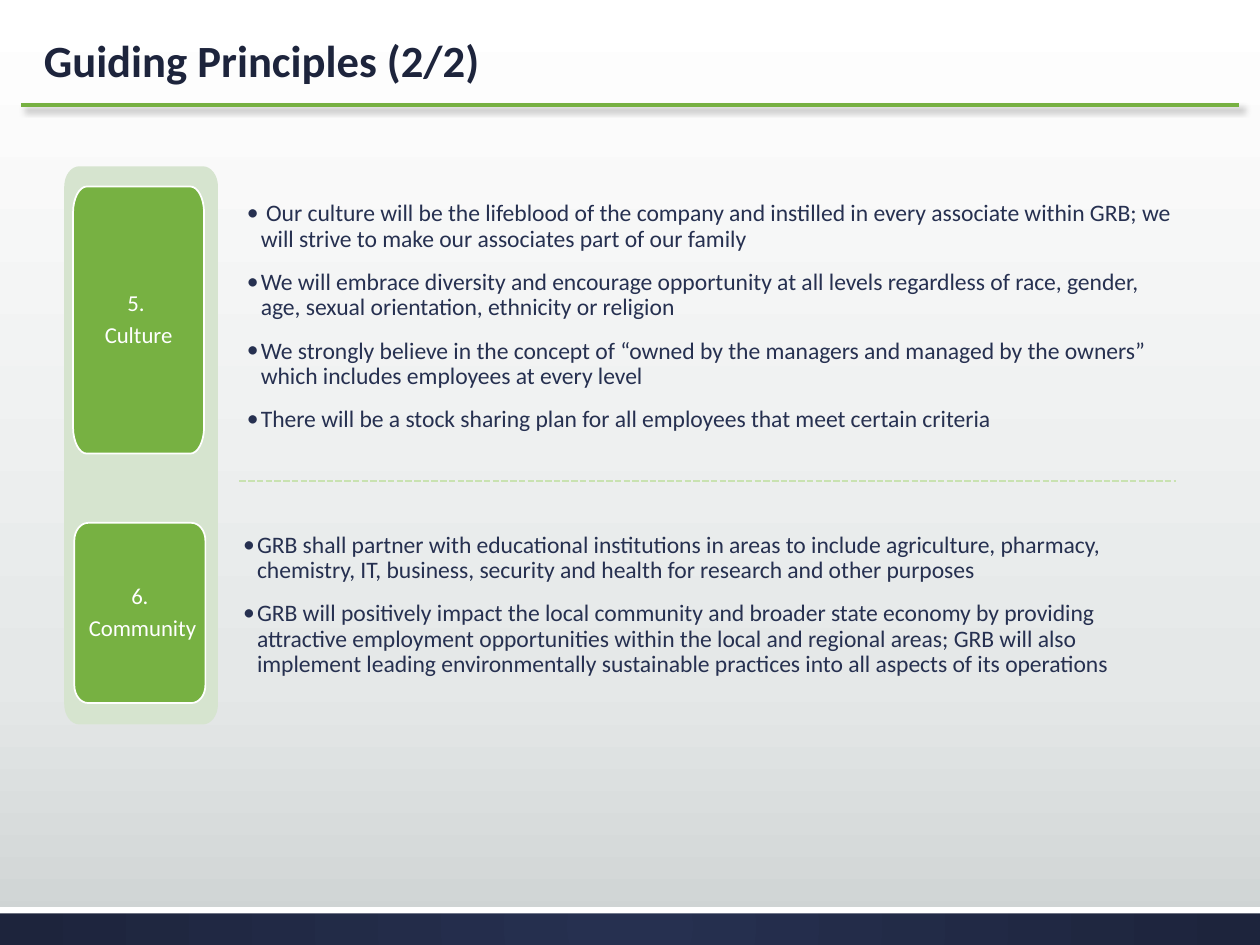
from dataclasses import dataclass

from lxml.etree import SubElement
from pptx import Presentation
from pptx.dml.color import RGBColor
from pptx.enum.dml import MSO_LINE_DASH_STYLE as Dash
from pptx.enum.shapes import MSO_CONNECTOR as Connector, MSO_SHAPE as Preset
from pptx.enum.text import MSO_ANCHOR as Anchor, MSO_AUTO_SIZE as AutoSize, PP_ALIGN as Align
from pptx.oxml.ns import qn
from pptx.util import Inches, Pt

WHITE = RGBColor(0xFF, 0xFF, 0xFF)
BLACK = RGBColor(0x00, 0x00, 0x00)
MIST = RGBColor(0xE5, 0xE8, 0xE8)
GREY = RGBColor(0xCD, 0xD2, 0xD2)
NAVY = RGBColor(0x26, 0x30, 0x50)
DARK_NAVY = RGBColor(0x1D, 0x24, 0x3C)
GREEN = RGBColor(0x77, 0xB1, 0x42)
PALE_GREEN = RGBColor(0xD6, 0xE4, 0xCF)
DASH_GREEN = RGBColor(0xC9, 0xE2, 0xB1)

TITLE_FONT = {"name": "Calibri", "size": Pt(25.5), "bold": True}
LABEL_FONT = {"name": "Calibri", "size": Pt(13)}
BODY_FONT = {"name": "Calibri", "size": Pt(13.5)}
LABEL_FORMAT = {"alignment": Align.CENTER, "line_spacing": 0.9, "space_after": Pt(4.5)}
BODY_FORMAT = {"line_spacing": 0.9, "space_before": Pt(10)}
SIDES = ("margin_left", "margin_top", "margin_right", "margin_bottom")
BULLET_INDENT = Inches(0.11)
CURVE = 0.55


@dataclass(frozen=True)
class Box:
    left: float
    top: float
    width: float
    height: float

    def lengths(self) -> list:
        return [Inches(value) for value in (self.left, self.top, self.width, self.height)]


@dataclass(frozen=True)
class Principle:
    label: tuple
    label_box: Box
    corner_height: float
    body_box: Box
    bullets: tuple


PRINCIPLES = (
    Principle(
        ("5. ", "Culture"), Box(0.58, 1.48, 1.04, 2.12), 0.21, Box(1.92, 1.58, 7.42, 1.89),
        (
            " Our culture will be the lifeblood of the company and instilled in every associate "
            "within GRB; we will strive to make our associates part of our family",
            "We will embrace diversity and encourage opportunity at all levels regardless of race, "
            "gender, age, sexual orientation, ethnicity or religion",
            "We strongly believe in the concept of “owned by the managers and managed by the "
            "owners” which includes employees at every level",
            "There will be a stock sharing plan for all employees that meet certain criteria",
        ),
    ),
    Principle(
        ("6.", " Community"), Box(0.59, 4.15, 1.04, 1.43), 0.14, Box(1.89, 4.21, 7.38, 1.21),
        (
            "GRB shall partner with educational institutions in areas to include agriculture, "
            "pharmacy, chemistry, IT, business, security and health for research and other purposes",
            "GRB will positively impact the local community and broader state economy by providing "
            "attractive employment opportunities within the local and regional areas; GRB will also "
            "implement leading environmentally sustainable practices into all aspects of its operations",
        ),
    ),
)


def apply(target, values: dict) -> None:
    for name, value in values.items():
        setattr(target, name, value)


def add_color(parent, color: RGBColor):
    return SubElement(parent, qn("a:srgbClr"), val=str(color))


def set_gradient(element, stops: tuple, radial: bool = False) -> None:
    """Replace the first solid fill inside the element with a gradient."""
    fill = element.find(".//" + qn("a:solidFill"))
    gradient = fill.makeelement(qn("a:gradFill"), {"rotWithShape": "1"})
    stop_list = SubElement(gradient, qn("a:gsLst"))
    for percent, color in stops:
        add_color(SubElement(stop_list, qn("a:gs"), pos=str(percent * 1000)), color)
    if radial:
        center = SubElement(gradient, qn("a:path"), path="circle")
        SubElement(center, qn("a:fillToRect"), l="50000", t="50000", r="50000", b="50000")
    else:
        SubElement(gradient, qn("a:lin"), ang="5400000", scaled="0")
    fill.getparent().replace(fill, gradient)


def set_plain(shape, color: RGBColor) -> None:
    shape.shadow.inherit = False
    shape.fill.solid()
    shape.fill.fore_color.rgb = color
    shape.line.fill.background()


def add_bar(slide, box: Box, color: RGBColor):
    shape = slide.shapes.add_shape(Preset.RECTANGLE, *box.lengths())
    set_plain(shape, color)
    return shape


def add_panel(slide, box: Box, corner_width: float, corner_height: float, color: RGBColor):
    """Draw a box whose four corners are elliptical curves."""
    left, top, width, height = box.lengths()
    across, down = Inches(corner_width), Inches(corner_height)
    points = [
        (0, down), (across, 0), (width - across, 0), (width, down),
        (width, height - down), (width - across, height), (across, height), (0, height - down),
    ]
    corners = [(0, 0), (width, 0), (width, height), (0, height)]
    builder = slide.shapes.build_freeform(*points[0])
    builder.add_line_segments(points[1:], close=True)
    shape = builder.convert_to_shape(left, top)
    segments = list(shape.element.iter(qn("a:lnTo")))
    for corner, start, end, segment in zip(corners, points[::2], points[1::2], segments[::2]):
        curve = segment.makeelement(qn("a:cubicBezTo"), {})
        controls = [
            [round(value + CURVE * (target - value)) for value, target in zip(point, corner)]
            for point in (start, end)
        ]
        for x, y in (*controls, end):
            SubElement(curve, qn("a:pt"), x=str(x), y=str(y))
        segment.getparent().replace(segment, curve)
    set_plain(shape, color)
    return shape


def write_text(shape, lines: tuple, font: dict, color: RGBColor, layout: dict,
               frame: dict, bulleted: bool = False) -> None:
    text_frame = shape.text_frame
    apply(text_frame, {"word_wrap": True, **frame})
    for index, line in enumerate(lines):
        paragraph = text_frame.paragraphs[0] if index == 0 else text_frame.add_paragraph()
        apply(paragraph, layout)
        run = paragraph.add_run()
        run.text = line
        apply(run.font, font)
        run.font.color.rgb = color
        if bulleted:
            properties = paragraph._p.get_or_add_pPr()
            properties.set("marL", str(BULLET_INDENT))
            properties.set("indent", str(-BULLET_INDENT))
            SubElement(properties, qn("a:buFont"), typeface="Calibri")
            SubElement(properties, qn("a:buChar"), char="•")


def add_rule(slide, left: float, right: float, top: float, color: RGBColor, width: float):
    rule = slide.shapes.add_connector(
        Connector.STRAIGHT, Inches(left), Inches(top), Inches(right), Inches(top))
    rule.line.color.rgb = color
    rule.line.width = Pt(width)
    return rule


def add_principle(slide, principle: Principle) -> None:
    panel = add_panel(slide, principle.label_box, 0.11, principle.corner_height, GREEN)
    panel.line.color.rgb = WHITE
    panel.line.width = Pt(1)
    write_text(panel, principle.label, LABEL_FONT, WHITE, LABEL_FORMAT,
               {"vertical_anchor": Anchor.MIDDLE, **dict.fromkeys(SIDES, Inches(0.06))})
    body = slide.shapes.add_textbox(*principle.body_box.lengths())
    margins = dict(zip(SIDES, (Inches(0.04), Inches(0.02)) * 2))
    write_text(body, principle.bullets, BODY_FONT, NAVY, BODY_FORMAT,
               {"auto_size": AutoSize.SHAPE_TO_FIT_TEXT, **margins}, bulleted=True)


def main() -> None:
    presentation = Presentation()
    apply(presentation, {"slide_width": Inches(10), "slide_height": Inches(7.5)})
    slide = presentation.slides.add_slide(presentation.slide_layouts[6])
    slide.background.fill.solid()
    slide.background.fill.fore_color.rgb = WHITE
    set_gradient(slide.element, ((0, WHITE), (72, MIST), (100, GREY)))

    footer = add_bar(slide, Box(0, 7.2, 10, 0.3), NAVY)
    set_gradient(footer.element, ((0, NAVY), (100, DARK_NAVY)), radial=True)
    add_bar(slide, Box(0, 7.2, 10, 0.05), WHITE)

    title = slide.shapes.add_textbox(*Box(0.25, 0.17, 7.8, 0.57).lengths())
    write_text(title, ("Guiding Principles (2/2)",), TITLE_FONT, DARK_NAVY,
               {"line_spacing": 0.9}, {"vertical_anchor": Anchor.BOTTOM})

    add_panel(slide, Box(0.51, 1.32, 1.22, 4.43), 0.12, 0.16, PALE_GREEN)
    for principle in PRINCIPLES:
        add_principle(slide, principle)

    divider = add_rule(slide, 1.9, 9.33, 3.82, DASH_GREEN, 1.25)
    divider.line.dash_style = Dash.SQUARE_DOT
    SubElement(divider.element.spPr, qn("a:effectLst"))
    underline = add_rule(slide, 0.17, 9.83, 0.83, GREEN, 2.25)
    shadow = SubElement(SubElement(underline.element.spPr, qn("a:effectLst")), qn("a:outerShdw"),
                        blurRad=str(Pt(4)), dist=str(Pt(3)), dir="2700000")
    SubElement(add_color(shadow, BLACK), qn("a:alpha"), val="40000")

    presentation.save("out.pptx")


if __name__ == "__main__":
    main()
